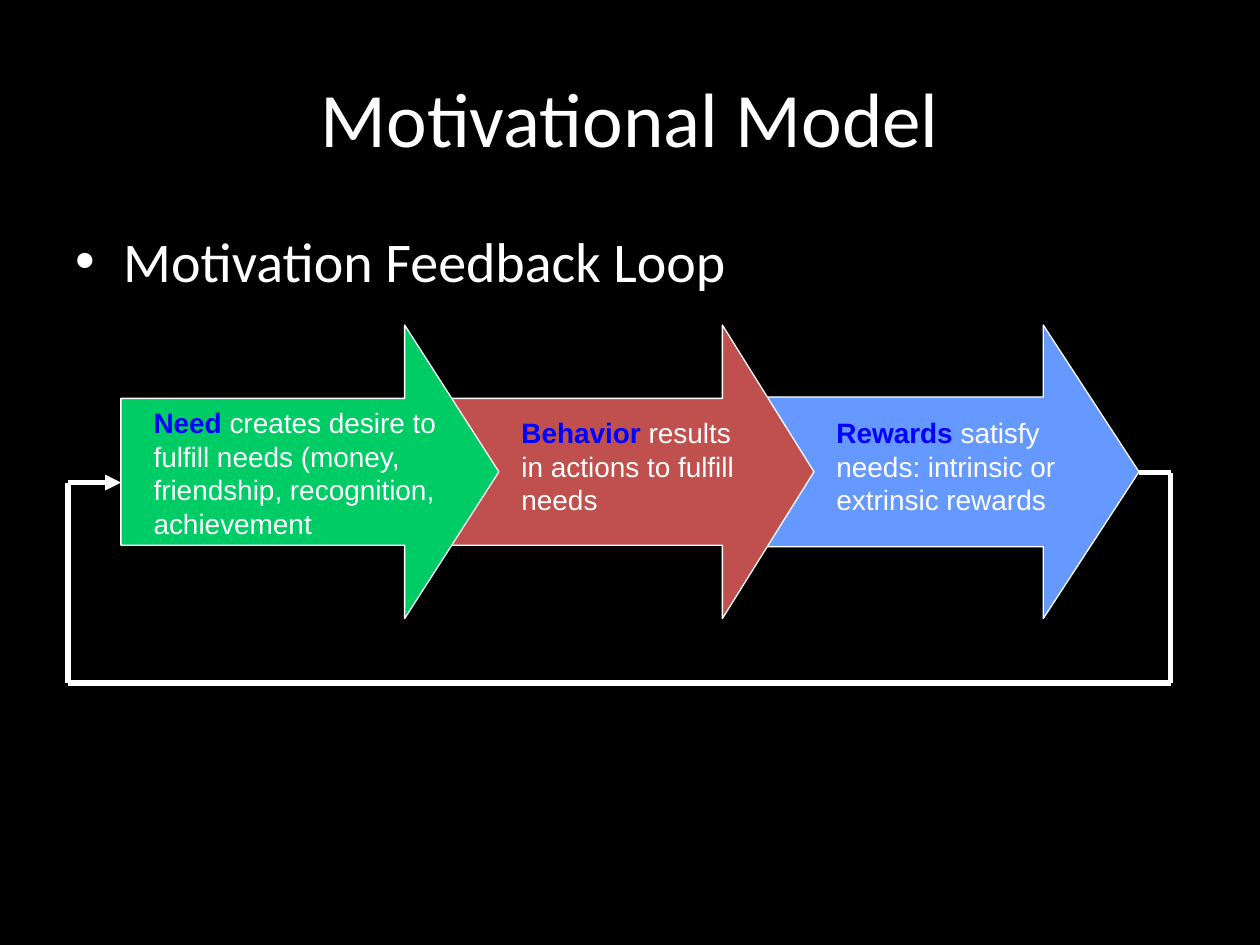
from itertools import pairwise
from lxml import etree
from pptx import Presentation
from pptx.dml.color import RGBColor
from pptx.enum.shapes import MSO_CONNECTOR, MSO_SHAPE
from pptx.enum.text import MSO_ANCHOR, MSO_AUTO_SIZE, PP_ALIGN
from pptx.oxml.ns import qn
from pptx.util import Inches, Pt

STRAIGHT = MSO_CONNECTOR.STRAIGHT
ARROW = MSO_SHAPE.RIGHT_ARROW
GROW = MSO_AUTO_SIZE.SHAPE_TO_FIT_TEXT
MIDDLE = MSO_ANCHOR.MIDDLE
CENTER = PP_ALIGN.CENTER

WIDTH, HEIGHT = 10, 7.5
MARGIN = 0.5
WHITE, BLACK, BLUE = "FFFFFF", "000000", "0000FF"

TITLE = "Motivational Model"
BULLET = "Motivation Feedback Loop"
ARROW_TOP, ARROW_HEIGHT = 2.58, 2.33
STEPS = [
    {"term": "Need", "rest": " creates desire to fulfill needs (money, friendship, recognition, achievement",
     "fill": "00CC66", "arrow": (0.96, 3), "adj": (0.5, 0.321), "box": (1.12, 3.17, 2.75, 1.17)},
    {"term": "Behavior", "rest": " results in actions to fulfill needs",
     "fill": "C0504D", "arrow": (3.54, 2.92), "adj": (0.5, 0.312), "box": (4.04, 3.25, 2, 0.9)},
    {"term": "Rewards ", "rest": "satisfy needs: intrinsic or extrinsic rewards",
     "fill": "6699FF", "arrow": (5.96, 3.08), "adj": (0.51, 0.326), "box": (6.54, 3.25, 2, 0.9)},
]
LOOP = [(9.04, 3.75), (9.29, 3.75), (9.29, 5.42), (0.54, 5.42), (0.54, 3.83), (0.96, 3.83)]


def rgb(color):
    return RGBColor.from_string(color)


def add_text(slide, box, runs, size, font):
    tf = slide.shapes.add_textbox(*map(Inches, box)).text_frame
    tf.word_wrap = True
    p = tf.paragraphs[0]
    for text, color, bold in runs:
        r = p.add_run()
        r.text = text
        r.font.size, r.font.name, r.font.bold = Pt(size), font, bold
        r.font.color.rgb = rgb(color)
    return tf


def add_bullet(p, indent):
    pPr = p._p.get_or_add_pPr()
    pPr.set("marL", str(Inches(indent)))
    pPr.set("indent", str(Inches(-indent)))
    etree.SubElement(pPr, qn("a:buFont")).set("typeface", "Arial")
    etree.SubElement(pPr, qn("a:buChar")).set("char", "•")


def add_step_arrow(slide, step):
    left, width = step["arrow"]
    s = slide.shapes.add_shape(ARROW, *map(Inches, (left, ARROW_TOP, width, ARROW_HEIGHT)))
    s.shadow.inherit = False
    s.adjustments[0], s.adjustments[1] = step["adj"]
    s.fill.solid()
    s.fill.fore_color.rgb = rgb(step["fill"])
    s.line.color.rgb = rgb(WHITE)
    s.line.width = Pt(0.75)


def add_line(slide, start, end):
    c = slide.shapes.add_connector(STRAIGHT, *map(Inches, start + end))
    c.line.color.rgb = rgb(WHITE)
    c.line.width = Pt(3)
    etree.SubElement(c._element.spPr, qn("a:effectLst"))
    return c


def main():
    prs = Presentation()
    prs.slide_width, prs.slide_height = Inches(WIDTH), Inches(HEIGHT)
    slide = prs.slides.add_slide(prs.slide_layouts[6])
    slide.background.fill.solid()
    slide.background.fill.fore_color.rgb = rgb(BLACK)

    content_width = WIDTH - 2 * MARGIN
    tf = add_text(slide, (MARGIN, 0.3, content_width, 1.25), [(TITLE, WHITE, False)], 44, "Calibri")
    tf.vertical_anchor = MIDDLE
    tf.paragraphs[0].alignment = CENTER
    tf = add_text(slide, (MARGIN, 1.75, content_width, 4.95), [(BULLET, WHITE, False)], 32, "Calibri")
    add_bullet(tf.paragraphs[0], 0.38)

    for step in reversed(STEPS):
        add_step_arrow(slide, step)
    for step in STEPS:
        runs = [(step["term"], BLUE, True), (step["rest"], WHITE, False)]
        add_text(slide, step["box"], runs, 16, "Arial").auto_size = GROW

    for start, end in pairwise(LOOP):
        c = add_line(slide, start, end)
    etree.SubElement(c.line._get_or_add_ln(), qn("a:tailEnd")).set("type", "triangle")

    prs.save("out.pptx")


if __name__ == "__main__":
    main()
